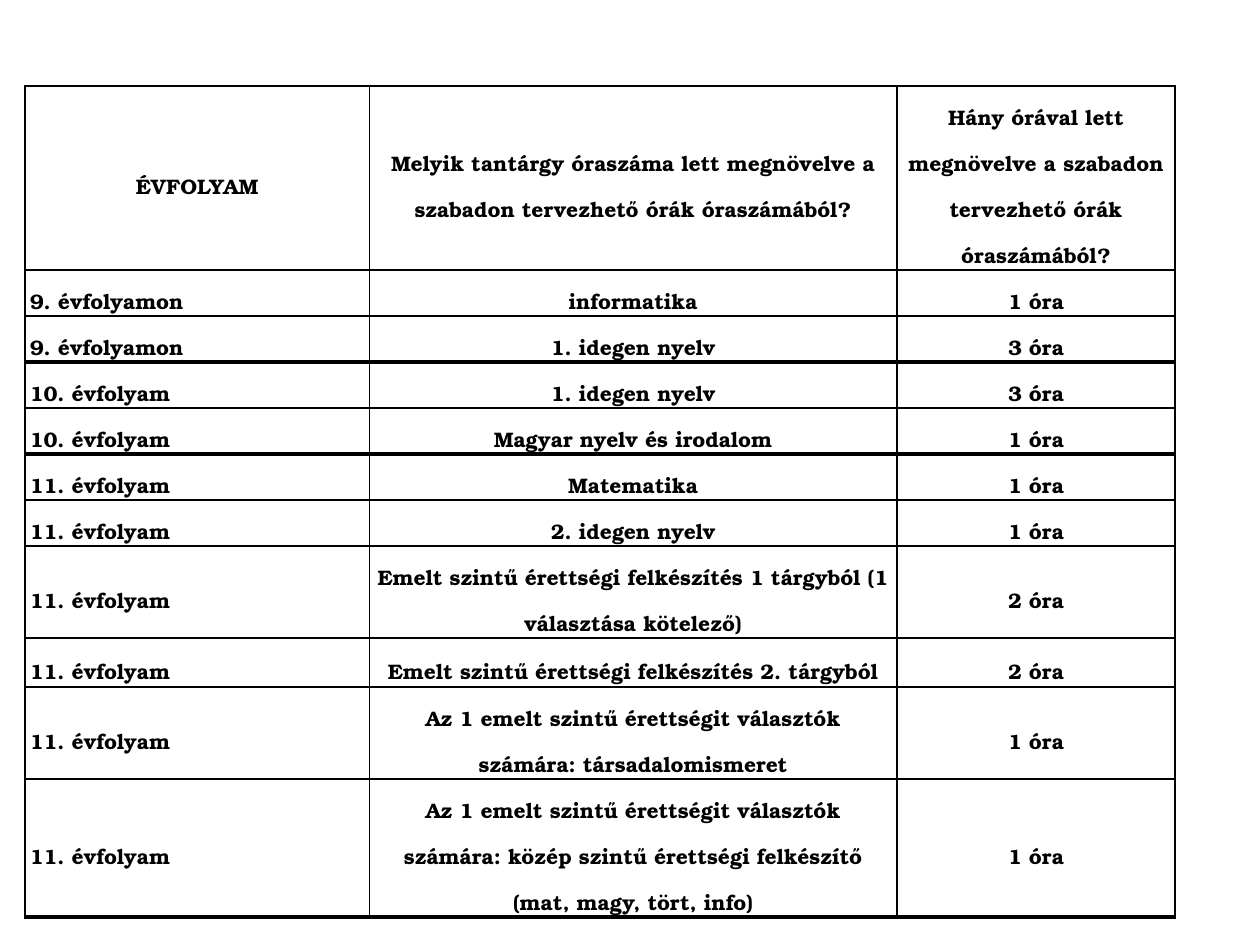
from lxml import etree
from pptx import Presentation
from pptx.dml.color import RGBColor
from pptx.enum.text import MSO_ANCHOR, PP_ALIGN
from pptx.oxml.ns import qn
from pptx.util import Cm, Pt

CENTER, JUSTIFY = PP_ALIGN.CENTER, PP_ALIGN.JUSTIFY
MIDDLE = MSO_ANCHOR.MIDDLE

THEME = {
    "ink": "000000",
    "font": {"name": "TeX Gyre Bonum", "size": Pt(12), "bold": True},
    "thin": Pt(1),
    "thick": Pt(2.25),
}
CELL = {
    "vertical_anchor": MIDDLE,
    "margin_left": Cm(0.1),
    "margin_right": Cm(0.1),
    "margin_top": 0,
    "margin_bottom": 0,
}

COL_WIDTHS = [6.95, 10.63, 5.61]
# Row height in cm, then the three cell texts
ROWS = [
    (2.54, "ÉVFOLYAM",
     "Melyik tantárgy óraszáma lett megnövelve a szabadon tervezhető órák óraszámából?",
     "Hány órával lett megnövelve a szabadon tervezhető órák óraszámából?"),
    (0.49, "9. évfolyamon", "informatika", "1 óra"),
    (0.49, "9. évfolyamon", "1. idegen nyelv", "3 óra"),
    (0.49, "10. évfolyam", "1. idegen nyelv", "3 óra"),
    (0.49, "10. évfolyam", "Magyar nyelv és irodalom", "1 óra"),
    (0.56, "11. évfolyam", "Matematika", "1 óra"),
    (0.49, "11. évfolyam", "2. idegen nyelv", "1 óra"),
    (0.99, "11. évfolyam",
     "Emelt szintű érettségi felkészítés 1 tárgyból (1 választása kötelező)", "2 óra"),
    (0.99, "11. évfolyam", "Emelt szintű érettségi felkészítés 2. tárgyból", "2 óra"),
    (0.99, "11. évfolyam",
     "Az 1 emelt szintű érettségit választók számára: társadalomismeret", "1 óra"),
    (1.49, "11. évfolyam",
     "Az 1 emelt szintű érettségit választók számára: közép szintű érettségi "
     "felkészítő (mat, magy, tört, info)", "1 óra"),
]
GRADE_ENDS = {2, 4, len(ROWS) - 1}  # a thick rule closes each grade


def add_border(cell, side, width):
    tcPr = cell._tc.get_or_add_tcPr()
    ln = etree.SubElement(tcPr, qn(f"a:ln{side}"), w=str(width))
    fill = etree.SubElement(ln, qn("a:solidFill"))
    etree.SubElement(fill, qn("a:srgbClr"), val=THEME["ink"])


prs = Presentation()
prs.slide_width, prs.slide_height = Cm(25.4), Cm(19.05)
s = prs.slides.add_slide(prs.slide_layouts[6])

height = sum(row[0] for row in ROWS)
table = s.shapes.add_table(len(ROWS), len(COL_WIDTHS), Cm(0.5), Cm(1.73),
                           Cm(sum(COL_WIDTHS)), Cm(height)).table
table.first_row = table.horz_banding = False
for col, width in zip(table.columns, COL_WIDTHS):
    col.width = Cm(width)

for i, (row_height, *texts) in enumerate(ROWS):
    table.rows[i].height = Cm(row_height)
    widths = {
        "L": THEME["thin"],
        "R": THEME["thin"],
        "T": THEME["thick"] if i - 1 in GRADE_ENDS else THEME["thin"],
        "B": THEME["thick"] if i in GRADE_ENDS else THEME["thin"],
    }
    for j, text in enumerate(texts):
        cell = table.cell(i, j)
        for name, value in CELL.items():
            setattr(cell, name, value)
        for side, width in widths.items():
            add_border(cell, side, width)
        cell.fill.background()

        p = cell.text_frame.paragraphs[0]
        p.alignment = JUSTIFY if i and j == 0 else CENTER
        p.line_spacing = 1.5
        r = p.add_run()
        r.text = text
        for name, value in THEME["font"].items():
            setattr(r.font, name, value)
        r.font.color.rgb = RGBColor.from_string(THEME["ink"])

prs.save("out.pptx")
